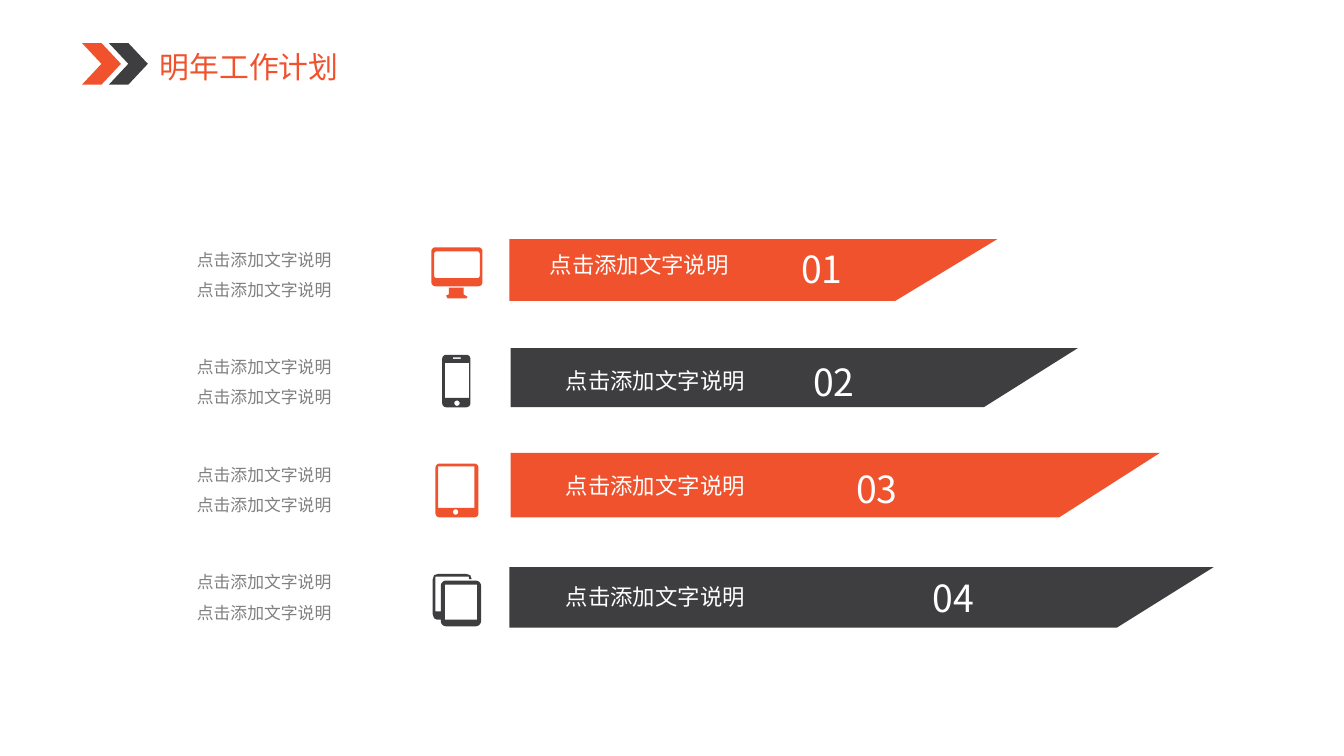
from math import cos, pi, sin

from lxml.etree import SubElement
from pptx import Presentation
from pptx.dml.color import RGBColor
from pptx.enum.shapes import MSO_SHAPE
from pptx.enum.text import MSO_ANCHOR, MSO_AUTO_SIZE, PP_ALIGN
from pptx.oxml.ns import qn
from pptx.util import Inches, Pt

ORANGE = RGBColor(0xF0, 0x52, 0x2D)
CHARCOAL = RGBColor(0x3E, 0x3E, 0x40)
GRAY = RGBColor(0x80, 0x80, 0x80)
WHITE = RGBColor(0xFF, 0xFF, 0xFF)
FONT = "Noto Sans CJK SC"

TITLE = "明年工作计划"
LABEL = "点击添加文字说明"
CHEVRONS = [(0.61, ORANGE), (0.81, CHARCOAL)]

# bar is (left, top, width, height) and tip the length of its pointed end;
# label_at and number_at are the (left, top) of their text boxes.
ROWS = [
    {"number": "01", "color": ORANGE, "bar": (3.79, 1.78, 2.87, 0.46), "tip": 0.76,
     "label_at": (4.02, 1.83), "number_at": (5.89, 1.79), "icon": "monitor"},
    {"number": "02", "color": CHARCOAL, "bar": (3.8, 2.59, 3.52, 0.44), "tip": 0.7,
     "label_at": (4.14, 2.69), "number_at": (5.98, 2.63), "icon": "phone"},
    {"number": "03", "color": ORANGE, "bar": (3.8, 3.37, 4.08, 0.48), "tip": 0.75,
     "label_at": (4.14, 3.47), "number_at": (6.3, 3.43), "icon": "tablet"},
    {"number": "04", "color": CHARCOAL, "bar": (3.79, 4.22, 4.52, 0.45), "tip": 0.72,
     "label_at": (4.14, 4.3), "number_at": (6.87, 4.24), "icon": "two tablets"},
]
NOTE_LEFT, NOTE_TOP, NOTE_STEP = 0.93, 1.74, 0.8

LABEL_FORMAT = {"size": Pt(12), "color": WHITE}
NUMBER_FORMAT = {"size": Pt(20), "color": WHITE}
NOTE_FORMAT = {"size": Pt(9), "color": GRAY}
TITLE_FORMAT = {"size": Pt(16), "color": ORANGE}
NOTE_PARAGRAPH = {"alignment": PP_ALIGN.CENTER, "line_spacing": 1.5}


def rounded(left, top, width, height, radius):
    """Return the outline points of a rounded rectangle, clockwise from the right."""
    centers = [(left + width - radius, top + height - radius),
               (left + radius, top + height - radius),
               (left + radius, top + radius),
               (left + width - radius, top + radius)]
    return [(x + radius * cos(angle), y + radius * sin(angle))
            for corner, (x, y) in enumerate(centers)
            for angle in (pi / 2 * (corner + step / 6) for step in range(7))]


def rectangle(left, top, width, height):
    right, bottom = left + width, top + height
    return [(left, top), (right, top), (right, bottom), (left, bottom)]


# Outlines inside another outline are cut out of it.
ICONS = {
    "monitor": [
        rounded(3.21, 1.84, 0.38, 0.29, 0.03),
        rounded(3.23, 1.87, 0.34, 0.2, 0.02),
        [(3.34, 2.14), (3.45, 2.14), (3.45, 2.19), (3.48, 2.21),
         (3.47, 2.22), (3.33, 2.22), (3.32, 2.2), (3.34, 2.19)],
    ],
    "phone": [
        rounded(3.29, 2.64, 0.21, 0.39, 0.03),
        rounded(3.37, 2.66, 0.06, 0.01, 0),
        rectangle(3.31, 2.7, 0.18, 0.26),
        rounded(3.38, 2.98, 0.04, 0.04, 0.02),
    ],
    "tablet": [
        rounded(3.24, 3.45, 0.32, 0.4, 0.03),
        rectangle(3.26, 3.47, 0.27, 0.31),
        rounded(3.37, 3.79, 0.04, 0.04, 0.02),
    ],
    "two tablets": [
        rounded(3.28, 4.32, 0.3, 0.34, 0.04),
        rectangle(3.31, 4.35, 0.24, 0.26),
        [(3.49, 4.31), (3.49, 4.29), (3.24, 4.29), (3.24, 4.55), (3.28, 4.55),
         (3.28, 4.61), (3.25, 4.61), (3.23, 4.6), (3.22, 4.57), (3.22, 4.31),
         (3.23, 4.28), (3.26, 4.27), (3.47, 4.27), (3.5, 4.28), (3.51, 4.31)],
    ],
}


def paint(shape, color):
    shape.shadow.inherit = False
    shape.fill.solid()
    shape.fill.fore_color.rgb = color
    shape.line.fill.background()


def add_block(shapes, kind, box, color):
    shape = shapes.add_shape(kind, *map(Inches, box))
    paint(shape, color)
    return shape


def add_bar(slide, row):
    """Draw a bar whose right end is a triangle turned a quarter."""
    left, top, width, height = row["bar"]
    tip = row["tip"]
    group = slide.shapes.add_group_shape()
    add_block(group.shapes, MSO_SHAPE.RECTANGLE, row["bar"], row["color"])
    shift = (tip - height) / 2
    tip_box = (left + width + shift, top - shift, height, tip)
    triangle = add_block(group.shapes, MSO_SHAPE.RIGHT_TRIANGLE, tip_box, row["color"])
    triangle.rotation = 90


def add_icon(slide, outlines, color):
    builder = None
    for outline in outlines:
        points = [(Inches(x), Inches(y)) for x, y in outline]
        if builder is None:
            builder = slide.shapes.build_freeform(*points[0])
        else:
            builder.move_to(*points[0])
        builder.add_line_segments(points[1:], close=True)
    paint(builder.convert_to_shape(), color)


def write(box, lines, text_format, paragraph_format, side_inset=0.07, wrap=True):
    frame = box.text_frame
    frame_format = {
        "word_wrap": wrap, "auto_size": MSO_AUTO_SIZE.SHAPE_TO_FIT_TEXT,
        "vertical_anchor": MSO_ANCHOR.TOP,
        "margin_left": Inches(side_inset), "margin_right": Inches(side_inset),
        "margin_top": Inches(0.04), "margin_bottom": Inches(0.04),
    }
    for name, value in frame_format.items():
        setattr(frame, name, value)
    for index, line in enumerate(lines):
        para = frame.add_paragraph() if index else frame.paragraphs[0]
        for name, value in paragraph_format.items():
            setattr(para, name, value)
        span = para.add_run()
        span.text = line
        span.font.size = text_format["size"]
        span.font.color.rgb = text_format["color"]
        span.font.name = FONT
        SubElement(span._r.get_or_add_rPr(), qn("a:ea"), typeface=FONT)


def add_text(slide, place, lines, text_format, paragraph_format):
    box = slide.shapes.add_textbox(*map(Inches, place))
    write(box, lines, text_format, paragraph_format)


def add_heading(slide):
    title = slide.shapes.title
    place = {"left": 1.11, "top": 0.32, "width": 1.5, "height": 0.35}
    for name, value in place.items():
        setattr(title, name, Inches(value))
    write(title, [TITLE], TITLE_FORMAT,
          {"alignment": PP_ALIGN.LEFT, "line_spacing": 1.0}, 0.08, False)
    for left, color in CHEVRONS:
        add_block(slide.shapes, MSO_SHAPE.CHEVRON, (left, 0.32, 0.29, 0.31), color)


def main():
    deck = Presentation()
    deck.slide_width = Inches(10)
    deck.slide_height = deck.slide_width * 9 // 16
    slide = deck.slides.add_slide(deck.slide_layouts[5])
    add_heading(slide)
    for index, row in enumerate(ROWS):
        add_bar(slide, row)
        add_text(slide, (*row["number_at"], 0.78, 0.41), [row["number"]], NUMBER_FORMAT, {})
        add_text(slide, (*row["label_at"], 2, 0.28), [LABEL], LABEL_FORMAT, {})
        add_icon(slide, ICONS[row["icon"]], row["color"])
        note_place = (NOTE_LEFT, NOTE_TOP + index * NOTE_STEP, 2.07, 0.5)
        add_text(slide, note_place, [LABEL] * 2, NOTE_FORMAT, NOTE_PARAGRAPH)
    deck.save("out.pptx")


if __name__ == "__main__":
    main()
